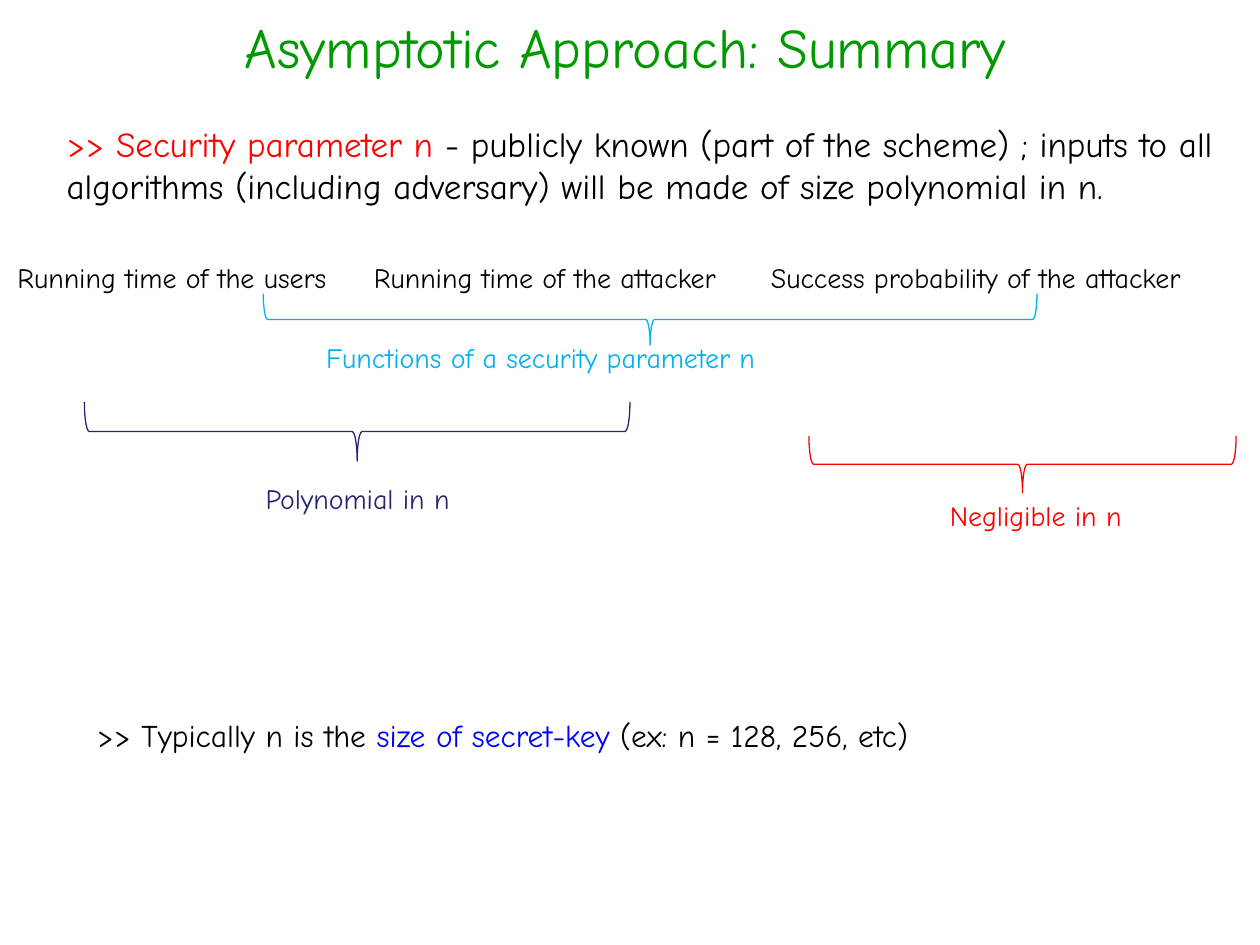
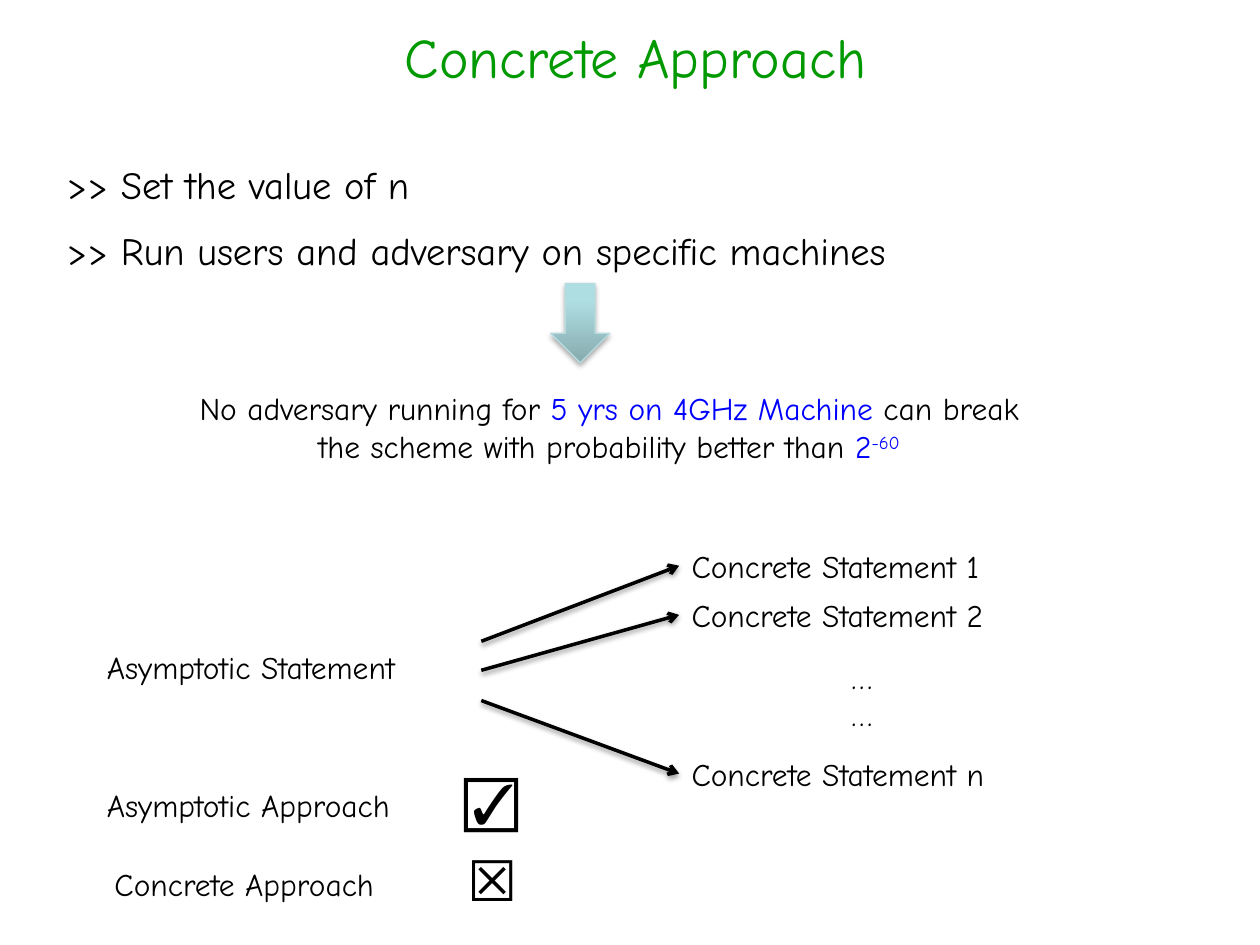
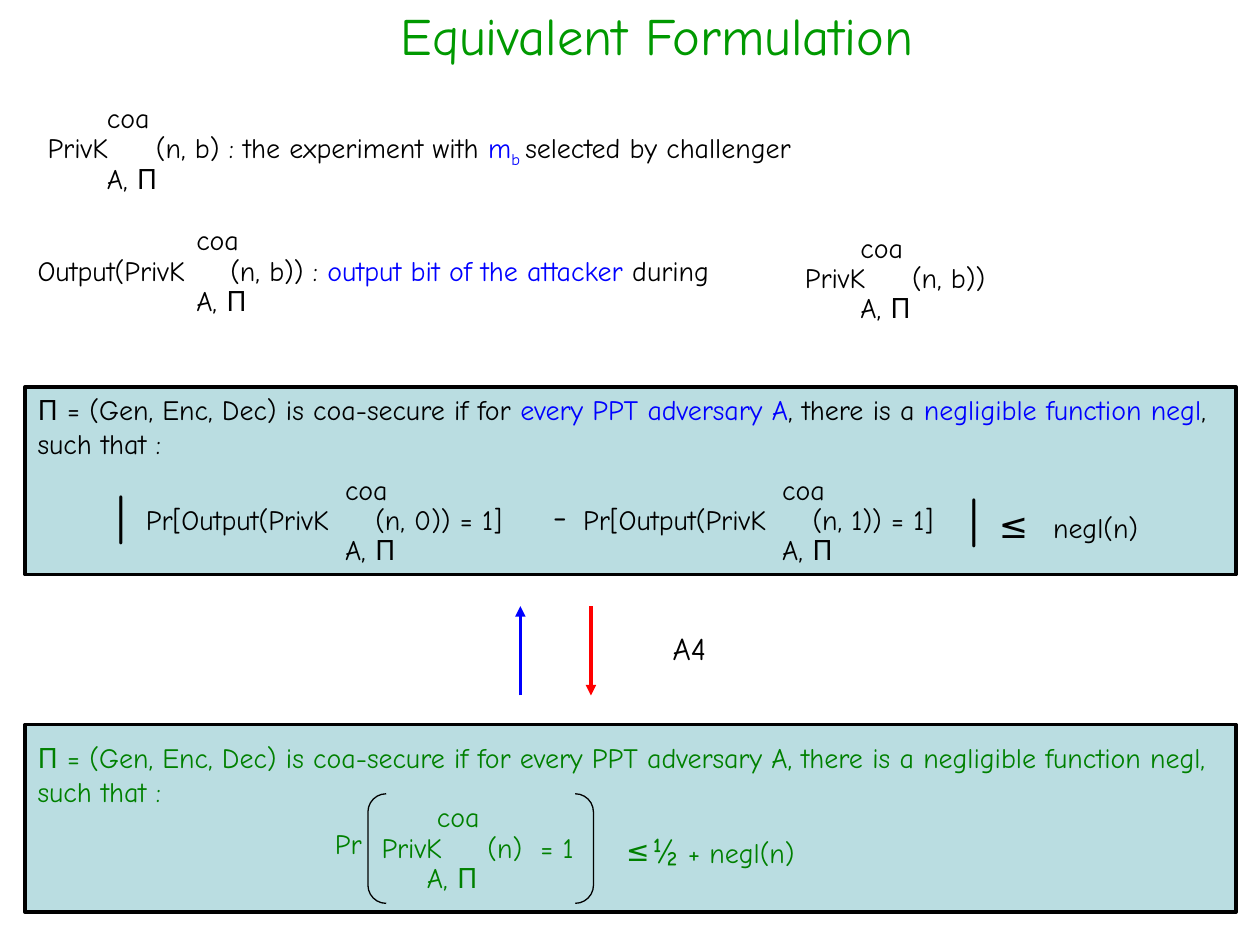
from lxml import etree
from pptx import Presentation
from pptx.dml.color import RGBColor
from pptx.enum.shapes import MSO_CONNECTOR, MSO_SHAPE
from pptx.enum.text import MSO_ANCHOR, MSO_AUTO_SIZE, PP_ALIGN
from pptx.oxml.ns import qn
from pptx.util import Inches, Pt

CENTER, LEFT = PP_ALIGN.CENTER, PP_ALIGN.LEFT
TOP, NO_FIT = MSO_ANCHOR.TOP, MSO_AUTO_SIZE.NONE
STRAIGHT = MSO_CONNECTOR.STRAIGHT
BRACE, DOWN_ARROW = MSO_SHAPE.LEFT_BRACE, MSO_SHAPE.DOWN_ARROW
PANEL, BRACKETS = MSO_SHAPE.RECTANGLE, MSO_SHAPE.DOUBLE_BRACKET
LEFT_SIDE = 1

FONT = "Comic Neue"
COLORS = {
    "title": "009900", "black": "000000", "red": "FF0000", "blue": "0000FF",
    "sky": "00B0F0", "navy": "262673", "green": "008000", "panel": "BADDE1",
    "arrow_dark": "87ABAE", "arrow_light": "AFDEE2", "arrow_edge": "B6DCDF",
}

# ---- Content: text is a string or a list of (text, colour[, baseline %]) ----
# Slide 1
PARAMETER = [
    (">> Security parameter n ", "red"),
    ("- publicly known (part of the scheme) ; inputs to all algorithms "
     "(including adversary) will be made of size polynomial in n.", "black"),
]
QUANTITIES = [  # text, left, width
    ("Running time of the users", 0.04, 2.91),
    ("Running time of the attacker", 2.87, 3.23),
    ("Success probability of the attacker", 6.02, 4.09),
]
BRACES = [  # label, colour, label box, brace as it shows: left, top, width, depth
    ("Functions of a security parameter n", "sky", (2.49, 2.65, 5.35, 0.37),
     (2.09, 2.33, 6.14, 0.41)),
    ("Polynomial in n", "navy", (2.01, 3.77, 1.81, 0.37),
     (0.67, 3.19, 4.33, 0.47)),
    ("Negligible in n", "red", (7.44, 3.91, 1.81, 0.37),
     (6.42, 3.46, 3.39, 0.45)),
]
KEY_SIZE = [(">> Typically n is the ", "black"), ("size of secret-key ", "blue"),
            ("(ex: n = 128, 256, etc)", "black")]

# Slide 2
STEPS = [">> Set the value of n",
         ">> Run users and adversary on specific machines"]
GUARANTEE = [
    ("No adversary running for ", "black"), ("5 yrs on 4GHz Machine ", "blue"),
    ("can break the scheme with probability better than ", "black"),
    ("2", "blue"), ("-60", "blue", 30),
]
STATEMENTS = [  # text, top, height where its arrow starts
    ("Concrete Statement 1", 4.29, 5.09),
    ("Concrete Statement 2", 4.68, 5.32),
    ("Concrete Statement n", 5.94, 5.56),
]
REMARKS = [  # text, box, size
    ("Asymptotic Statement", (0.75, 5.09, 2.66, 0.4), 18),
    ("……", (6.66, 5.17, 0.23, 0.71), 18),
    ("Asymptotic Approach", (0.75, 6.19, 2.57, 0.4), 18),
    ("Concrete Approach", (0.81, 6.82, 2.45, 0.4), 18),
    ("☒", (3.61, 6.66, 0.6, 0.64), 32),
    ("☑", (3.58, 6.03, 0.6, 0.64), 32),
]

# Slide 3
PANEL_TOPS = [3.07, 5.75]
EXPERIMENTS = [  # text, left, top, width, tab, left of coa, shift of A, colour
    ([("PrivK\t(n, b) : the experiment with ", "black"), ("m", "blue"),
      ("b ", "blue", -25), ("selected by challenger", "black")],
     0.28, 0.99, 8.73, 0.86, 0.47, 0, "black"),
    ([("Output(PrivK\t(n, b)) : ", "black"),
      ("output bit of the attacker ", "blue"), ("during", "black")],
     0.2, 1.96, 6, 1.53, 1.26, 0, "black"),
    ("PrivK\t(n, b))", 6.29, 2.02, 1.86, 0.85, 0.44, 0, "black"),
    ("Pr[Output(PrivK\t(n, 0)) = 1]", 1.06, 3.94, 3.39, 1.82, 1.58, 0, "black"),
    ("Pr[Output(PrivK\t(n, 1)) = 1]", 4.53, 3.94, 3.39, 1.82, 1.58, 0, "black"),
    ("PrivK\t(n)", 2.93, 6.54, 1.55, 0.84, 0.44, -0.08, "green"),
]
SCRIPT_RISE = 0.24
SECURE = [
    ("Π = (Gen, Enc, Dec) is coa-secure if for ", "black"),
    ("every PPT adversary A", "blue"), (", there is a ", "black"),
    ("negligible function negl", "blue"), (", such that :", "black"),
]
SECURE_AGAIN = "".join(part[0] for part in SECURE)
SYMBOLS = [  # text, box, size, colour
    ("-", (4.29, 3.87, 0.39, 0.44), 20, "black"),
    ("|", (0.83, 3.82, 0.47, 0.57), 28, "black"),
    ("|", (7.6, 3.84, 0.47, 0.57), 28, "black"),
    ("Pr", (2.56, 6.51, 0.59, 0.37), 16, "green"),
    ("= 1", (4.19, 6.54, 0.59, 0.37), 16, "green"),
    ("≤", (4.87, 6.57, 0.59, 0.37), 16, "green"),
    ("A4", (5.24, 4.94, 0.61, 0.4), 18, "black"),
]
BOUNDS = [  # symbol, rest, box, tab, colour
    ("≤", "\tnegl(n)", (7.83, 3.95, 1.43, 0.44), 0.43, "black"),
    ("½", " + negl(n)", (5.08, 6.53, 1.41, 0.84), None, "green"),
]
IMPLICATIONS = [  # x, from, to, colour
    (4.13, 5.52, 4.81, "blue"),
    (4.69, 4.81, 5.52, "red"),
]


# ---- Helpers ----
def rgb(color):
    return RGBColor.from_string(COLORS[color])


def inches(box):
    return [Inches(length) for length in box]


def fill_paragraph(paragraph, text, size=16, color="black", align=LEFT, tab=None):
    paragraph.alignment = align
    if tab:
        tabs = etree.SubElement(paragraph._p.get_or_add_pPr(), qn("a:tabLst"))
        etree.SubElement(tabs, qn("a:tab"), pos=str(Inches(tab)), algn="l")
    parts = [(text, color)] if isinstance(text, str) else text
    for words, part_color, *baseline in parts:
        run = paragraph.add_run()
        run.text = words
        run.font.name = FONT
        run.font.size = Pt(size)
        run.font.color.rgb = rgb(part_color)
        if baseline:
            run._r.get_or_add_rPr().set("baseline", str(baseline[0] * 1000))


def add_text(slide, text, box, **style):
    label = slide.shapes.add_textbox(*inches(box))
    label.text_frame.word_wrap = True
    fill_paragraph(label.text_frame.paragraphs[0], text, **style)
    return label


def add_titled_slide(prs, text, box, size=32):
    slide = prs.slides.add_slide(prs.slide_layouts[5])
    title = slide.shapes.title
    title.left, title.top, title.width, title.height = inches(box)
    frame = title.text_frame
    frame.vertical_anchor = TOP
    frame.auto_size = NO_FIT
    fill_paragraph(frame.paragraphs[0], text, size=size, color="title", align=CENTER)
    return slide


def add_outline(slide, kind, box, line="black", width=0.75, fill=None):
    shape = slide.shapes.add_shape(kind, *inches(box))
    shape.shadow.inherit = False
    if fill:
        shape.fill.solid()
        shape.fill.fore_color.rgb = rgb(fill)
    else:
        shape.fill.background()
    shape.line.color.rgb = rgb(line)
    shape.line.width = Pt(width)
    return shape


def set_effects(shape, shadow_alpha=None, distance=1.6):
    properties = shape._element.spPr
    for old in properties.findall(qn("a:effectLst")):
        properties.remove(old)
    effects = etree.SubElement(properties, qn("a:effectLst"))
    if shadow_alpha:
        shadow = etree.SubElement(
            effects, qn("a:outerShdw"), blurRad=str(Pt(3.1)),
            dist=str(Pt(distance)), dir="5400000", rotWithShape="0")
        tint = etree.SubElement(shadow, qn("a:srgbClr"), val=COLORS["black"])
        etree.SubElement(tint, qn("a:alpha"), val=str(shadow_alpha * 1000))


def add_arrow(slide, start, end, color="black", head="triangle", shadow_alpha=None):
    arrow = slide.shapes.add_connector(STRAIGHT, *inches(start + end))
    arrow.line.color.rgb = rgb(color)
    arrow.line.width = Pt(2)
    etree.SubElement(arrow.line._get_or_add_ln(), qn("a:tailEnd"), type=head)
    set_effects(arrow, shadow_alpha)
    return arrow


# ---- Slides ----
def build_summary(prs):
    slide = add_titled_slide(prs, "Asymptotic Approach: Summary",
                             (0.2, 0.05, 9.53, 0.52))
    add_text(slide, PARAMETER, (0.43, 0.92, 9.57, 0.77), size=20)
    for text, left, width in QUANTITIES:
        add_text(slide, text, (left, 2.02, width, 0.37))
    for text, color, label_box, (left, top, width, depth) in BRACES:
        shift = (width - depth) / 2  # the brace turns about its centre
        brace = add_outline(slide, BRACE, (left + shift, top - shift, depth, width),
                            line=color)
        brace.rotation = 270
        add_text(slide, text, label_box, color=color)
    add_text(slide, KEY_SIZE, (0.67, 5.63, 7.56, 0.4), size=18)


def build_concrete(prs):
    slide = add_titled_slide(prs, "Concrete Approach", (0.28, 0.13, 9.53, 0.55))
    steps = add_text(slide, STEPS[0], (0.43, 1.23, 8.27, 1.03), size=22)
    second_step = steps.text_frame.add_paragraph()
    second_step.space_before = Pt(11)
    fill_paragraph(second_step, STEPS[1], size=22)

    # Arrow from the steps to the guarantee
    arrow = add_outline(slide, DOWN_ARROW, (4.37, 2.25, 0.47, 0.63), line="arrow_edge")
    arrow.fill.gradient()
    arrow.fill.gradient_angle = 90
    for stop, color, position in zip(arrow.fill.gradient_stops,
                                     ("arrow_dark", "arrow_light"), (0, 0.8)):
        stop.color.rgb = rgb(color)
        stop.position = position
    set_effects(arrow, shadow_alpha=35, distance=1.8)
    add_text(slide, GUARANTEE, (1.3, 3.04, 7.07, 0.71), size=18, align=CENTER)

    # One asymptotic statement leads to many concrete ones
    for text, top, start in STATEMENTS:
        statement = add_text(slide, text, (5.39, top, 2.66, 0.4), size=18)
        link = add_arrow(slide, (3.82, start), (5.39, top + 0.2), head="arrow",
                         shadow_alpha=38)
        link.end_connect(statement, LEFT_SIDE)
    for text, box, size in REMARKS:
        add_text(slide, text, box, size=size)


def build_equivalent(prs):
    slide = add_titled_slide(prs, "Equivalent Formulation",
                             (0.57, -0.03, 9.29, 1.02), size=30)
    for top in PANEL_TOPS:
        add_outline(slide, PANEL, (0.2, top, 9.61, 1.49), width=2, fill="panel")
    add_text(slide, SECURE, (0.2, 3.07, 9.8, 0.64))
    add_text(slide, SECURE_AGAIN, (0.2, 5.83, 9.8, 0.64), color="green")

    # Experiments with their upper and lower scripts
    for text, left, top, width, tab, script, shift, color in EXPERIMENTS:
        add_text(slide, text, (left, top, width, 0.37), color=color, tab=tab)
        add_text(slide, "coa", (left + script, top - SCRIPT_RISE, 0.7, 0.37),
                 color=color)
        add_text(slide, "A, Π",
                 (left + script + shift, top + SCRIPT_RISE, 0.7, 0.37), color=color)

    for text, box, size, color in SYMBOLS:
        add_text(slide, text, box, size=size, color=color)
    for symbol, rest, box, tab, color in BOUNDS:
        bound = add_text(slide, symbol, box, size=20, color=color, tab=tab)
        fill_paragraph(bound.text_frame.paragraphs[0], rest, color=color)
    add_outline(slide, BRACKETS, (2.92, 6.3, 1.79, 0.87))
    for x, start, end, color in IMPLICATIONS:
        add_arrow(slide, (x, start), (x, end), color=color)


def main():
    prs = Presentation()
    prs.slide_width, prs.slide_height = Inches(10), Inches(7.5)
    build_summary(prs)
    build_concrete(prs)
    build_equivalent(prs)
    prs.save("out.pptx")


if __name__ == "__main__":
    main()
